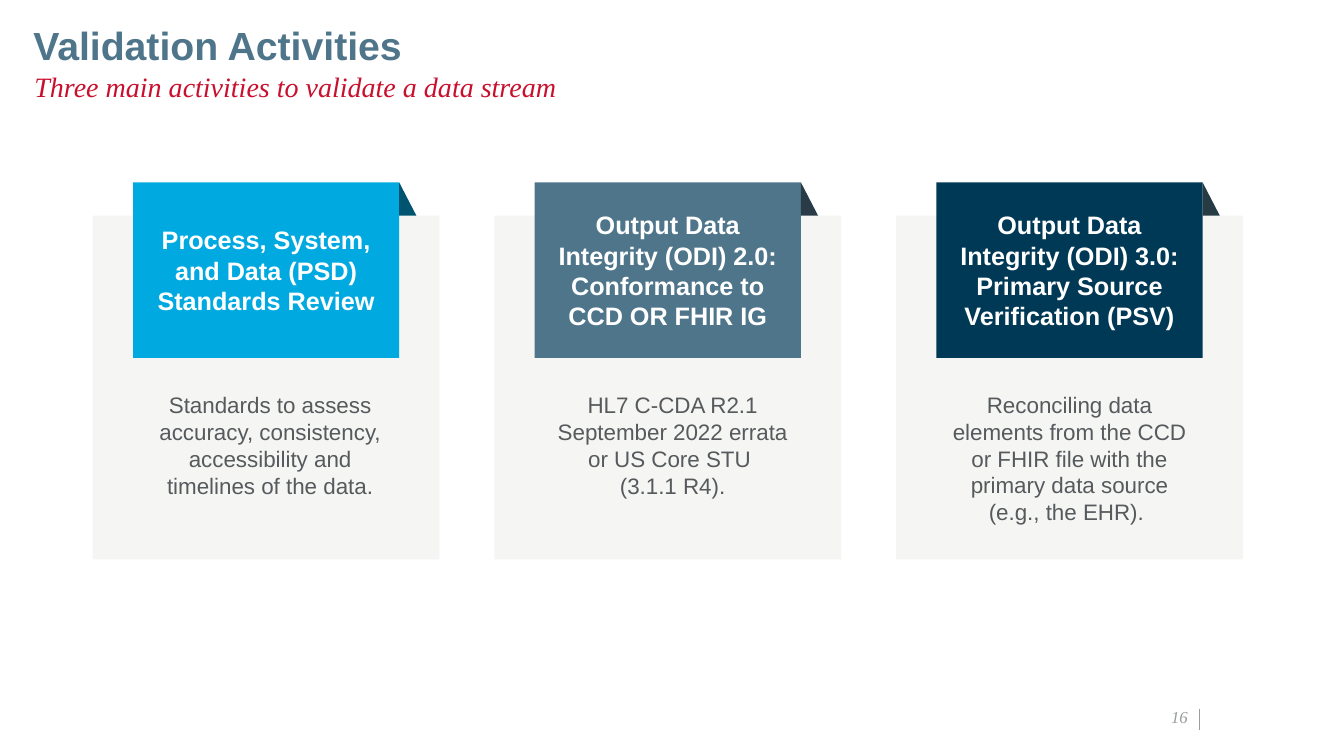
from lxml import etree
from pptx import Presentation
from pptx.dml.color import RGBColor
from pptx.enum.shapes import MSO_CONNECTOR, MSO_SHAPE
from pptx.enum.text import MSO_ANCHOR, MSO_AUTO_SIZE, PP_ALIGN
from pptx.oxml.ns import qn
from pptx.util import Inches, Pt

RECTANGLE, FOLD = MSO_SHAPE.RECTANGLE, MSO_SHAPE.RIGHT_TRIANGLE
STRAIGHT = MSO_CONNECTOR.STRAIGHT
TOP, MIDDLE, BOTTOM = MSO_ANCHOR.TOP, MSO_ANCHOR.MIDDLE, MSO_ANCHOR.BOTTOM
LEFT, CENTER, RIGHT = PP_ALIGN.LEFT, PP_ALIGN.CENTER, PP_ALIGN.RIGHT
FIXED, GROW = MSO_AUTO_SIZE.NONE, MSO_AUTO_SIZE.SHAPE_TO_FIT_TEXT

WHITE = RGBColor(0xFF, 0xFF, 0xFF)
SLATE = RGBColor(0x4F, 0x75, 0x8B)
RED = RGBColor(0xC8, 0x10, 0x2E)
SKY = RGBColor(0x00, 0xA9, 0xE0)
NAVY = RGBColor(0x00, 0x39, 0x56)
TEAL_FOLD = RGBColor(0x00, 0x54, 0x70)
SLATE_FOLD = RGBColor(0x28, 0x3B, 0x46)
NAVY_FOLD = RGBColor(0x27, 0x3B, 0x45)
PANEL = RGBColor(0xCE, 0xCF, 0xCB)
BODY = RGBColor(0x56, 0x5A, 0x5C)
GREY = RGBColor(0x98, 0x9D, 0x9F)

SANS, SERIF = "Arial", "Times New Roman"
TITLE_FONT = {"name": SANS, "size": Pt(28), "bold": True}
SUBTITLE_FONT = {"name": SERIF, "size": Pt(20), "italic": True}
HEADING_FONT = {"name": SANS, "size": Pt(18), "bold": True}
BODY_FONT = {"name": SANS, "size": Pt(16)}
NUMBER_FONT = {"name": SERIF, "size": Pt(12), "italic": True}

# Card columns, in percent of the slide's width
FIRST_CARD, CARD_PITCH = 6.9, 29.89


class SlideBuilder:
    """Places elements by percent of the slide's width and height."""

    def __init__(self, deck):
        self.deck = deck
        self.slide = deck.slides.add_slide(deck.slide_layouts[5])
        self.shapes = self.slide.shapes

    def box(self, x, y, w, h):
        width, height = self.deck.slide_width, self.deck.slide_height
        return [int(share * side / 100) for share, side in
                ((x, width), (y, height), (w, width), (h, height))]

    def set_text(self, shape, text, font, color, align=LEFT, anchor=TOP,
                 insets=(0, 0, 0, 0), auto_size=FIXED, **spacing):
        frame = shape.text_frame
        paragraph = frame.paragraphs[0]
        paragraph.text = text
        margins = dict(zip(("margin_left", "margin_top", "margin_right",
                            "margin_bottom"), map(Inches, insets)))
        frame_format = {"word_wrap": True, "auto_size": auto_size,
                        "vertical_anchor": anchor, **margins}
        for target, values in ((frame, frame_format),
                               (paragraph, {"alignment": align, **spacing}),
                               (paragraph.font, font)):
            for key, value in values.items():
                setattr(target, key, value)
        paragraph.font.color.rgb = color

    def title(self, text, area, *style, **options):
        heading = self.shapes.title
        heading.left, heading.top, heading.width, heading.height = self.box(*area)
        self.set_text(heading, text, *style, **options)

    def text(self, text, area, *style, **options):
        self.set_text(self.shapes.add_textbox(*self.box(*area)), text, *style,
                      **options)

    def block(self, kind, area, color, opacity=100):
        block = self.shapes.add_shape(kind, *self.box(*area))
        block.shadow.inherit = False
        block.fill.solid()
        block.fill.fore_color.rgb = color
        block.line.fill.background()
        if opacity < 100:
            tint = block._element.spPr.find(f".//{qn('a:srgbClr')}")
            etree.SubElement(tint, qn("a:alpha")).set("val", str(opacity * 1000))
        return block

    def rule(self, x, y, height, color):
        left, top, _, length = self.box(x, y, 0, height)
        rule = self.shapes.add_connector(STRAIGHT, left, top, left, top + length)
        rule.line.color.rgb = color
        rule.line.width = Pt(1)
        etree.SubElement(rule._element.spPr, qn("a:effectLst"))

    def card(self, column, heading, body, color, fold_color, body_inset, body_height):
        x = FIRST_CARD + column * CARD_PITCH
        self.block(RECTANGLE, (x, 28.53, 25.8, 45.47), PANEL, opacity=20)
        header = self.block(RECTANGLE, (x + 3, 24.13, 19.8, 23.2), color)
        self.set_text(header, heading, HEADING_FONT, WHITE, CENTER, MIDDLE,
                      (0.1, 0, 0.1, 0))
        self.text(body, (x + body_inset, 51.07, 19.8, body_height), BODY_FONT, BODY,
                  CENTER, insets=(0.1, 0.05, 0.1, 0.05), auto_size=GROW,
                  space_after=Pt(12))
        self.block(FOLD, (x + 22.8, 24.13, 1.28, 4.4), fold_color)


def main():
    deck = Presentation()
    deck.slide_width, deck.slide_height = Inches(13.33), Inches(7.5)
    page = SlideBuilder(deck)

    # Title and subtitle
    page.title("Validation Activities", (2.48, 3.47, 95.05, 5.47), TITLE_FONT, SLATE,
               insets=(0, 0, 0.1, 0), line_spacing=0.9)
    page.text("Three main activities to validate a data stream",
              (2.48, 9.73, 95.05, 4.8), SUBTITLE_FONT, RED,
              insets=(0.01, 0, 0, 0), line_spacing=0.9, space_after=Pt(6))

    # Activity cards
    activities = [
        ("Process, System, and Data (PSD) Standards Review",
         "Standards to assess accuracy, consistency, accessibility and "
         "timelines of the data.",
         SKY, TEAL_FOLD, 3.3, 15.73),
        ("Output Data Integrity (ODI) 2.0: Conformance to CCD OR FHIR IG",
         "HL7 C-CDA R2.1 September 2022 errata or US Core STU \n(3.1.1 R4).",
         SLATE, SLATE_FOLD, 3.36, 15.73),
        ("Output Data Integrity (ODI) 3.0: Primary Source Verification (PSV)",
         "Reconciling data elements from the CCD or FHIR file with the "
         "primary data source (e.g., the EHR). ",
         NAVY, NAVY_FOLD, 3, 19.33),
    ]
    for column, activity in enumerate(activities):
        page.card(column, *activity)

    # Slide number
    page.rule(89.27, 93.73, 2.8, GREY)
    page.text("16", (82.45, 93.73, 5.93, 2.4), NUMBER_FONT, GREY, RIGHT, BOTTOM)

    deck.save("out.pptx")


if __name__ == "__main__":
    main()
